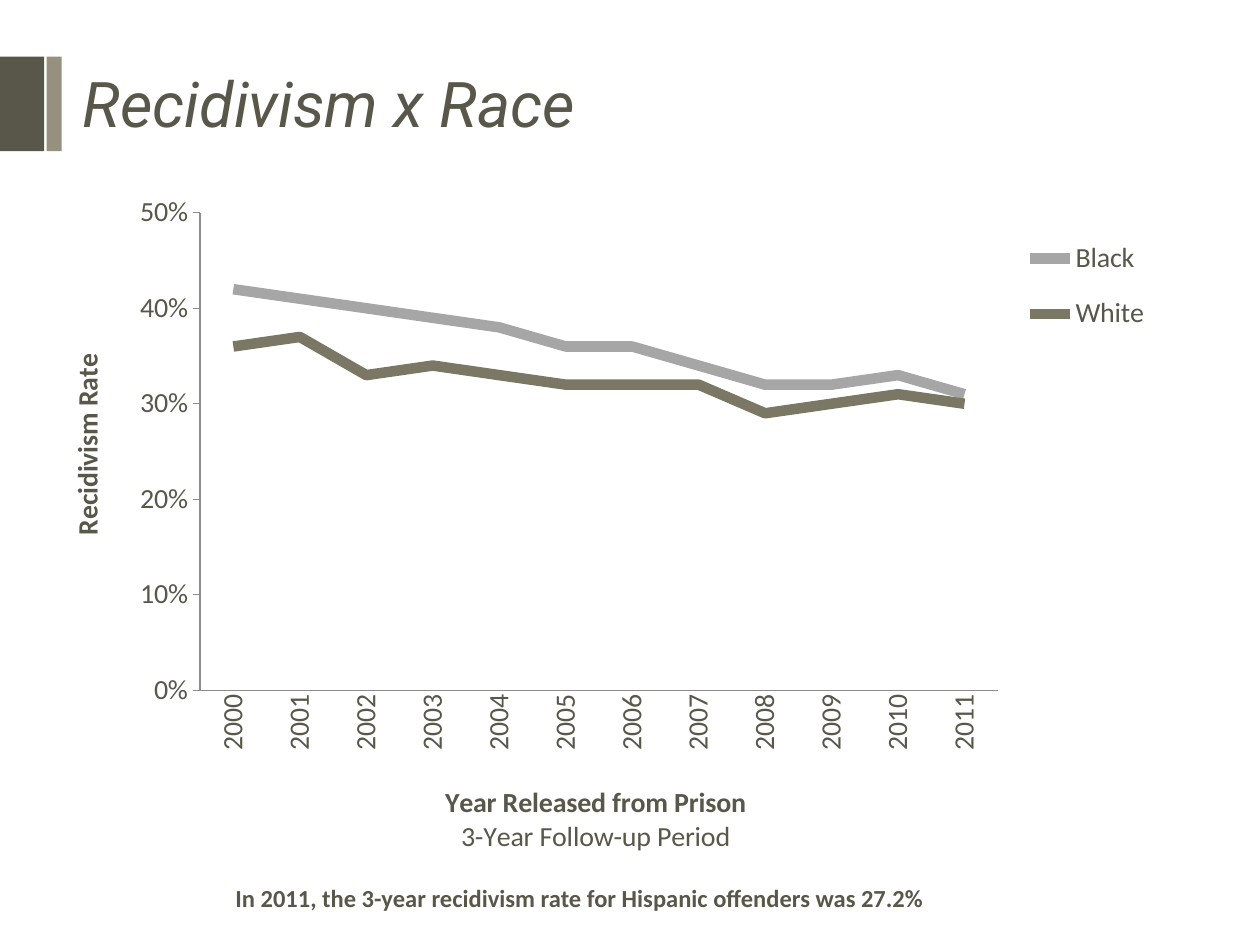
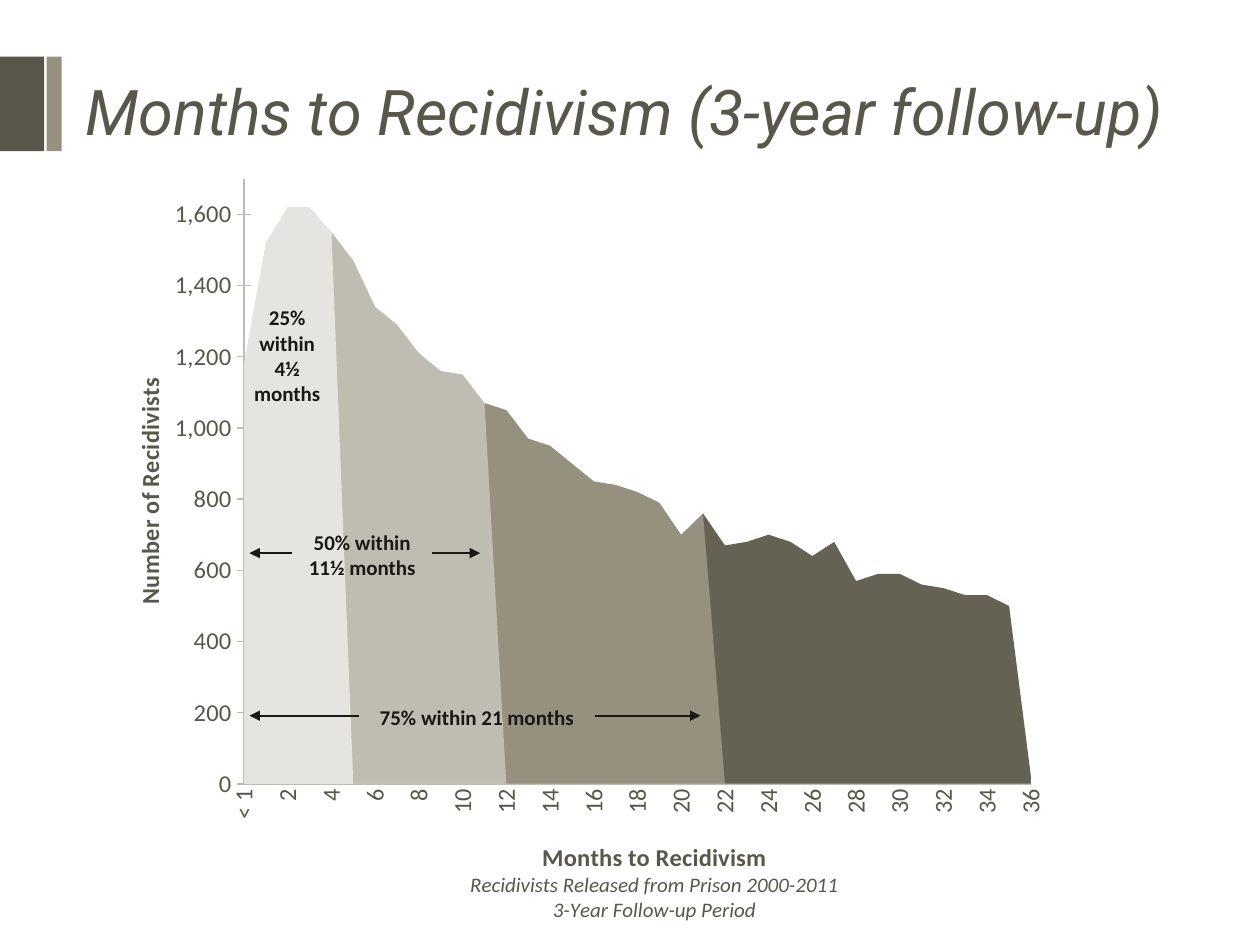
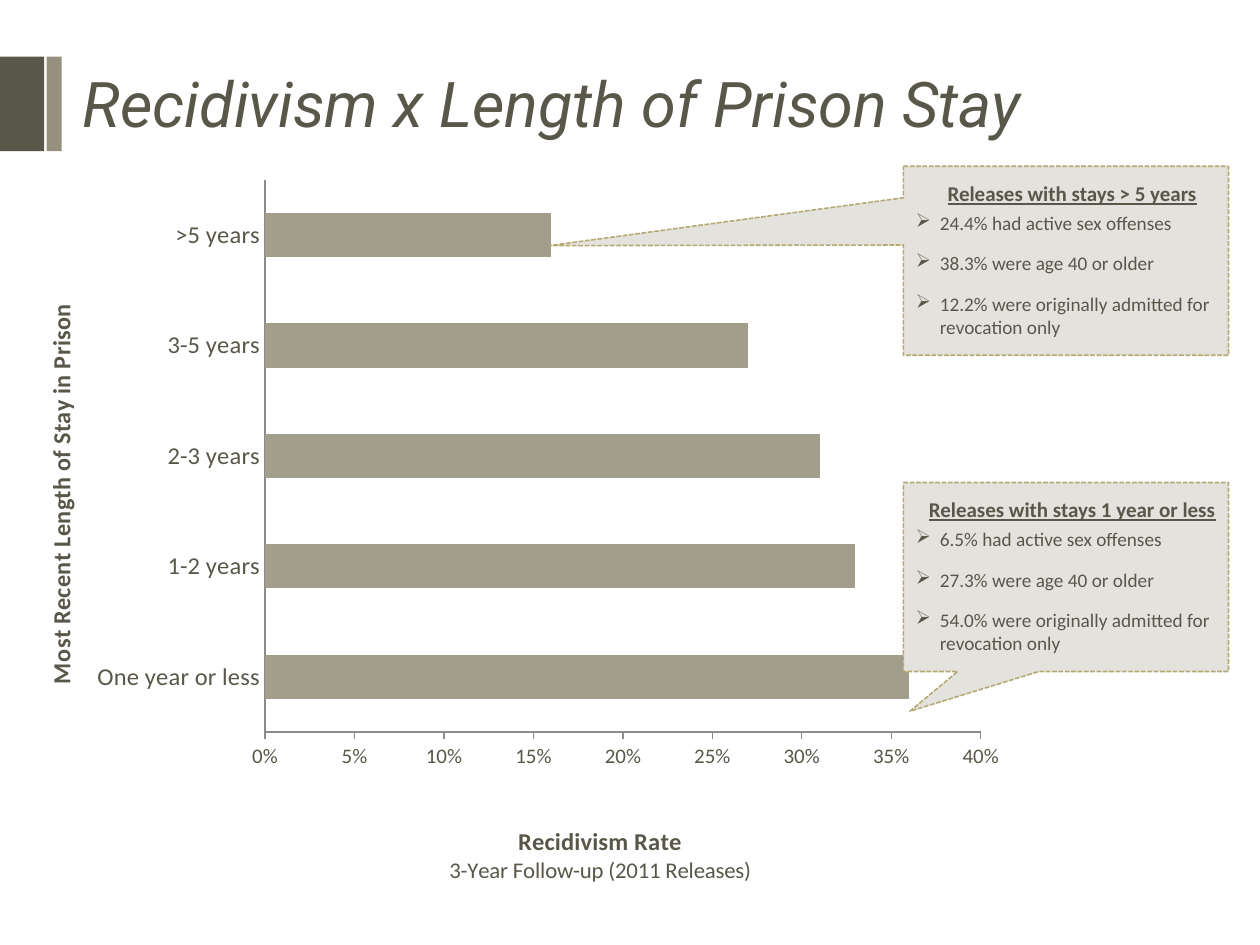
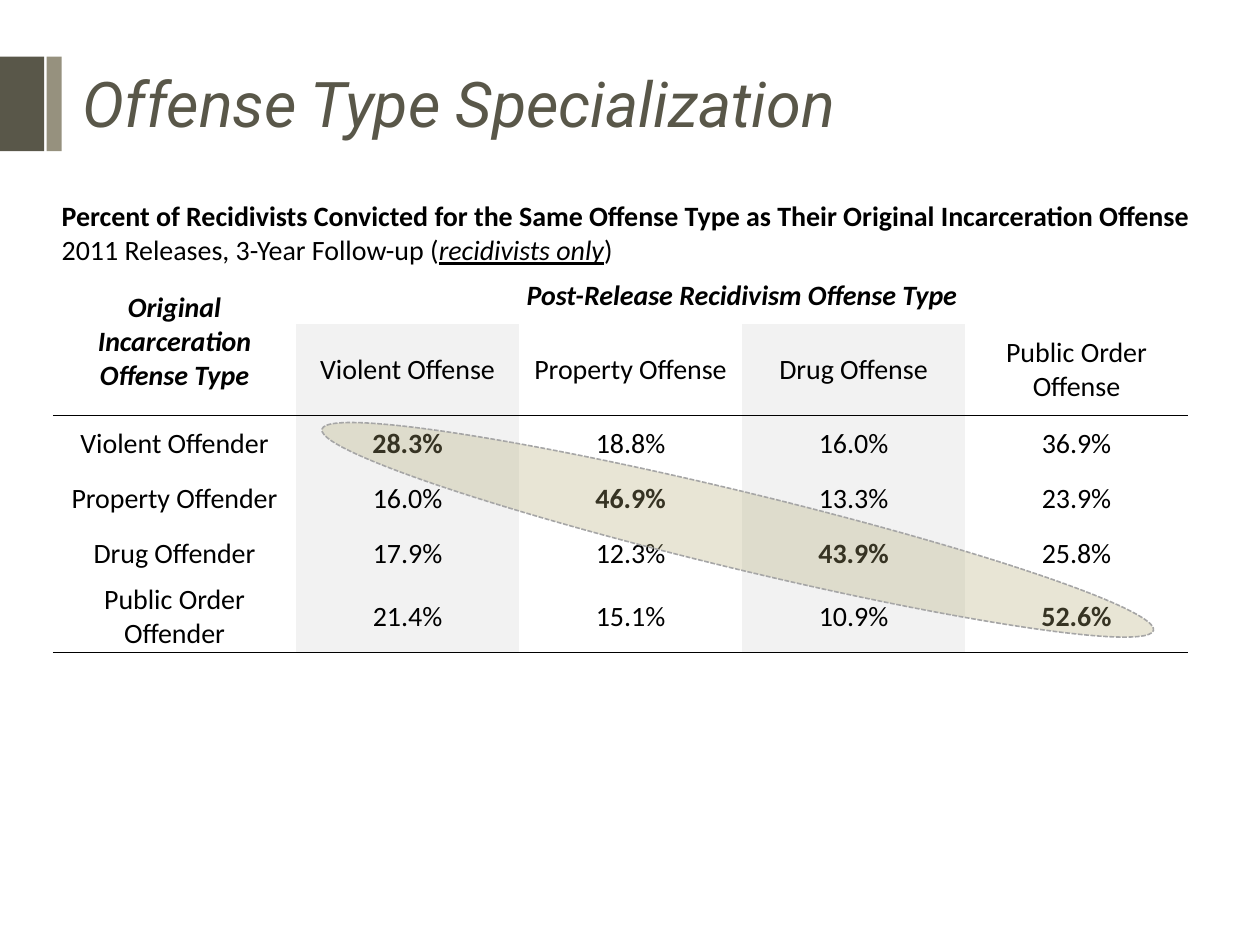
from dataclasses import dataclass

from lxml.etree import SubElement
from pptx import Presentation
from pptx.chart.data import CategoryChartData as ChartData
from pptx.dml.color import RGBColor
from pptx.enum.chart import XL_CHART_TYPE as Chart, XL_LEGEND_POSITION as LegendPos
from pptx.enum.chart import XL_TICK_MARK as Tick
from pptx.enum.dml import MSO_LINE as Dash
from pptx.enum.shapes import MSO_CONNECTOR as Connector, MSO_SHAPE as Shape
from pptx.enum.text import MSO_ANCHOR as Anchor, PP_ALIGN as Align
from pptx.oxml.ns import qn
from pptx.util import Emu, Pt

EMU_PER_PX = 9144  # 100 px to the inch


@dataclass(frozen=True)
class Theme:
    heading_font: str = "Roboto"
    body_font: str = "Calibri"
    ink: str = "595749"
    black: str = "000000"
    label: str = "191814"
    accent: str = "96917E"
    axis: str = "8C8C8C"
    pale_axis: str = "BFBCB1"
    grey: str = "A6A6A6"
    olive: str = "7B7765"
    bar: str = "A19E8C"
    gold: str = "B3AA75"
    callout: str = "E3E2DD"
    column: str = "F2F2F2"
    quartiles: tuple = ("E5E4E0", "BFBCB1", "96917E", "656153")
    title_size: int = 36
    large: int = 16
    medium: int = 14
    note: int = 13
    small: int = 12
    bullet: int = 11


THEME = Theme()


def px(length):
    return Emu(length * EMU_PER_PX)


def box_of(*lengths):
    return [px(length) for length in lengths]


def rgb(code):
    return RGBColor.from_string(code)


# Text
def style(font, size=None, color=THEME.ink, face=THEME.body_font,
          bold=False, italic=False, underline=False):
    font.size = Pt(size or THEME.medium)
    font.color.rgb = rgb(color)
    font.name = face
    font.bold, font.italic, font.underline = bold, italic, underline


def write(frame, *paragraphs, align=None, **look):
    """Each paragraph is a string or a list of (text, changes of look)."""
    for index, content in enumerate(paragraphs):
        line = frame.paragraphs[0] if index == 0 else frame.add_paragraph()
        if align is not None:
            line.alignment = align
        runs = [(content, {})] if isinstance(content, str) else content
        for words, changes in runs:
            for part, piece in enumerate(words.split("\n")):
                if part:
                    line.add_line_break()
                run = line.add_run()
                run.text = piece
                style(run.font, **{**look, **changes})


def add_text(slide, place, *paragraphs, wrap=True, anchor=Anchor.TOP, **look):
    box = slide.shapes.add_textbox(*box_of(*place))
    box.text_frame.word_wrap = wrap
    box.text_frame.vertical_anchor = anchor
    write(box.text_frame, *paragraphs, **look)
    return box


def add_bullet(line, indent=19):
    props = line._p.get_or_add_pPr()
    props.set("marL", str(px(indent)))
    props.set("indent", str(-px(indent)))
    SubElement(props, qn("a:buChar")).set("char", "➢")


# Shapes
def add_figure(slide, kind, place, fill, alpha=None, dashed=None):
    figure = slide.shapes.add_shape(kind, *box_of(*place))
    figure.shadow.inherit = False
    figure.fill.solid()
    figure.fill.fore_color.rgb = rgb(fill)
    if alpha is not None:
        color = figure.fill._xPr.find(qn("a:solidFill"))[0]
        SubElement(color, qn("a:alpha")).set("val", str(alpha * 1000))
    if dashed:
        figure.line.color.rgb = rgb(dashed)
        figure.line.width = Pt(0.9)
        figure.line.dash_style = Dash.SQUARE_DOT
    else:
        figure.line.fill.background()
    return figure


def add_span_arrow(slide, label, side, tip):
    """Arrow from a side of the label out to the tip."""
    arrow = slide.shapes.add_connector(Connector.STRAIGHT, *box_of(*tip, *tip))
    arrow.begin_connect(label, side)
    arrow.line.color.rgb = rgb(THEME.label)
    arrow.line.width = Pt(1)
    SubElement(arrow.line._get_or_add_ln(), qn("a:tailEnd")).set("type", "triangle")
    SubElement(arrow._element.spPr, qn("a:effectLst"))


def add_callout(slide, top, pointer, heading, facts):
    callout = add_figure(slide, Shape.RECTANGULAR_CALLOUT, (717, top, 258, 150),
                         THEME.callout, dashed=THEME.gold)
    callout.adjustments[0], callout.adjustments[1] = pointer
    frame = callout.text_frame
    frame.word_wrap = True
    frame.vertical_anchor = Anchor.MIDDLE
    frame.margin_left, frame.margin_top, frame.margin_right, frame.margin_bottom = \
        box_of(10, 0, 0, 5)
    write(frame, [(heading, dict(size=THEME.small, bold=True, underline=True))],
          *facts, size=THEME.bullet, align=Align.LEFT)
    title, *points = frame.paragraphs
    title.alignment = Align.CENTER
    title.line_spacing = 1.15
    title.space_after = Pt(3)
    for point in points:
        point.space_after = Pt(10)
        add_bullet(point)


def start_slide(deck, title, place=(56, 44, 850, 75)):
    slide = deck.slides.add_slide(deck.slide_layouts[6])
    add_figure(slide, Shape.RECTANGLE, (0, 45, 35, 75), THEME.ink)
    add_figure(slide, Shape.RECTANGLE, (37, 45, 12, 75), THEME.accent)
    add_text(slide, place, title, anchor=Anchor.MIDDLE, size=THEME.title_size,
             face=THEME.heading_font, italic=True)
    return slide


# Charts
def set_layout(part, inner=False, **fractions):
    layout = part.find(qn("c:layout"))
    if layout is None:
        layout = part.makeelement(qn("c:layout"))
        part.insert(0, layout)
    manual = SubElement(layout, qn("c:manualLayout"))
    settings = dict(layoutTarget="inner") if inner else {}
    settings.update(xMode="edge", yMode="edge", **fractions)
    for name, value in settings.items():
        SubElement(manual, qn(f"c:{name}")).set("val", str(value))


def add_chart(slide, kind, place, categories, series, plot):
    """Series are (name, values); plot is the inner area in slide px."""
    data = ChartData()
    data.categories = categories
    for name, values in series:
        data.add_series(name, values)
    chart = slide.shapes.add_chart(kind, *box_of(*place), data).chart
    chart.has_title = chart.has_legend = False
    style(chart.font, size=THEME.large)
    chart.plots[0].vary_by_categories = False
    set_layout(chart._chartSpace.chart.plotArea, inner=True, **within(place, plot))
    return chart


def within(place, area):
    """Position and size of an area as fractions of the chart's frame."""
    left, top, width, height = place
    fractions = dict(x=(area[0] - left) / width, y=(area[1] - top) / height)
    if len(area) == 4:
        fractions.update(w=area[2] / width, h=area[3] / height)
    return {name: round(value, 3) for name, value in fractions.items()}


def format_axis(axis, place, title, title_at, size, tick=Tick.NONE, color=THEME.axis,
                title_size=THEME.medium, upright=False, steep_labels=False):
    axis.has_major_gridlines = False
    axis.major_tick_mark, axis.minor_tick_mark = tick, Tick.NONE
    axis.format.line.color.rgb = rgb(color)
    axis.format.line.width = Pt(0.75)
    style(axis.tick_labels.font, size=size)
    if steep_labels:
        axis._element.find(qn("c:txPr")).find(qn("a:bodyPr")).set("rot", "-5400000")
    heading = axis.axis_title
    write(heading.text_frame, *title, size=title_size, align=Align.CENTER)
    if upright:
        heading.text_frame._txBody.find(qn("a:bodyPr")).set("rot", "-5400000")
    set_layout(heading._element, **within(place, title_at))


def scale_axis(axis, top, step, number_format):
    axis.minimum_scale, axis.maximum_scale, axis.major_unit = 0, top, step
    axis.tick_labels.number_format = number_format
    axis.tick_labels.number_format_is_linked = False


def fill_series(series, color):
    series.format.fill.solid()
    series.format.fill.fore_color.rgb = rgb(color)


def strong(words):
    return [(words, dict(bold=True))]


# Table
def add_bottom_rule(cell):
    props = cell._tc.get_or_add_tcPr()
    line = props.makeelement(qn("a:lnB"), {"w": str(Pt(1))})
    SubElement(SubElement(line, qn("a:solidFill")), qn("a:srgbClr")).set("val", THEME.black)
    props.insert(0, line)


def fill_cell(cell, *paragraphs, align=Align.CENTER, **look):
    cell.vertical_anchor = Anchor.MIDDLE
    cell.margin_left = cell.margin_right = px(7)
    cell.margin_top = cell.margin_bottom = 0
    write(cell.text_frame, *paragraphs, size=THEME.large, color=THEME.black,
          align=align, **look)


def add_plain_table(slide, place, widths, heights):
    table = slide.shapes.add_table(len(heights), len(widths), *box_of(*place)).table
    table.first_row = table.horz_banding = False
    table._tbl.tblPr.find(qn("a:tableStyleId")).text = \
        "{2D5ABB26-0587-4C30-8999-92F81FD0307C}"  # no style, no grid
    for column, width in zip(table.columns, widths):
        column.width = px(width)
    for row, height in zip(table.rows, heights):
        row.height = px(height)
    for cell in table.iter_cells():
        cell.fill.background()
    return table


# Slides
def build_race(deck):
    slide = start_slide(deck, "Recidivism x Race")
    add_text(slide, (177, 696, 675, 34),
             "In 2011, the 3-year recidivism rate for Hispanic offenders was 27.2%", bold=True)
    rates = [
        ("Black", (.42, .41, .40, .39, .38, .36, .36, .34, .32, .32, .33, .31)),
        ("White", (.36, .37, .33, .34, .33, .32, .32, .32, .29, .30, .31, .30)),
    ]
    place = (50, 150, 907, 533)
    chart = add_chart(slide, Chart.LINE, place, [str(year) for year in range(2000, 2012)],
                      rates, plot=(159, 169, 633, 383))
    for series, color in zip(chart.plots[0].series, (THEME.grey, THEME.olive)):
        series.smooth = False
        series.format.line.color.rgb = rgb(color)
        series.format.line.width = Pt(6)
    format_axis(chart.category_axis, place,
                [strong("Year Released from Prison"), "3-Year Follow-up Period"],
                (350, 625), THEME.large, title_size=THEME.large, steep_labels=True)
    format_axis(chart.value_axis, place, [strong("Recidivism Rate")], (50, 280),
                THEME.large, tick=Tick.OUTSIDE, title_size=THEME.large, upright=True)
    scale_axis(chart.value_axis, 0.5, 0.1, "0%")
    chart.has_legend = True
    chart.legend.position = LegendPos.RIGHT
    chart.legend.include_in_layout = False
    style(chart.legend.font, size=THEME.large)
    set_layout(chart.legend._element, **within(place, (800, 175, 125, 106)))


def build_months(deck):
    slide = start_slide(deck, "Months to Recidivism (3-year follow-up)", (58, 44, 900, 87))
    recidivists = (
        1180, 1520, 1620, 1620, 1550, 1470, 1340, 1290, 1210, 1160, 1150, 1070, 1050,
        970, 950, 900, 850, 840, 820, 790, 700, 760, 670, 680, 700, 680, 640, 680, 570,
        590, 590, 560, 550, 530, 530, 500, 20)
    quartile_ends = (0, 4, 11, 21, 36)
    quartiles = [
        (f"Series {number}", [count if first <= month <= last else None
                              for month, count in enumerate(recidivists)])
        for number, (first, last) in enumerate(zip(quartile_ends, quartile_ends[1:]), 1)]
    months = ["< 1"] + [str(month) for month in range(1, 37)]
    place = (101, 125, 806, 612)
    chart = add_chart(slide, Chart.AREA, place, months, quartiles,
                      plot=(194, 142, 625, 488))
    for series, color in zip(chart.plots[0].series, THEME.quartiles):
        fill_series(series, color)
    subtitle = dict(size=THEME.small, italic=True)
    format_axis(chart.category_axis, place,
                [strong("Months to Recidivism"),
                 [("Recidivists Released from Prison 2000-2011", subtitle)],
                 [("3-Year Follow-up Period", subtitle)]],
                (370, 673), THEME.medium, color=THEME.pale_axis, steep_labels=True)
    format_axis(chart.value_axis, place, [strong("Number of Recidivists")], (102, 302),
                THEME.medium, tick=Tick.CROSS, color=THEME.pale_axis, upright=True)
    scale_axis(chart.value_axis, 1700, 200, "#,##0")

    # Label every second month, start at the axis, drop blanks to zero
    for last in chart.category_axis._element.iter(qn("c:noMultiLvlLbl")):
        skip = last.makeelement(qn("c:tickLblSkip"), {"val": "2"})
        last.addprevious(skip)
    for tag, value in (("c:crossBetween", "midCat"), ("c:dispBlanksAs", "zero")):
        for setting in chart._chartSpace.iter(qn(tag)):
            setting.set("val", value)

    # Quartile labels and their spans
    look = dict(wrap=False, align=Align.CENTER, size=THEME.small, color=THEME.label,
                bold=True)
    add_text(slide, (183, 237, 90, 85), "25%", "within", "4½", "months", **look)
    half = add_text(slide, (232, 415, 111, 48), "50% within\n11½ months", **look)
    most = add_text(slide, (285, 554, 187, 28), "75% within 21 months", **look)
    for label, middle, end in ((half, 439, 381), (most, 568, 556)):
        add_span_arrow(slide, label, 1, (198, middle))
        add_span_arrow(slide, label, 3, (end, middle))


def build_stay(deck):
    slide = start_slide(deck, "Recidivism x Length of Prison Stay")
    place = (8, 132, 800, 575)
    stays = ("One year or less", "1-2 years", "2-3 years", "3-5 years", ">5 years")
    chart = add_chart(slide, Chart.BAR_CLUSTERED, place, stays,
                      [("Series 1", (.36, .33, .31, .27, .16))],
                      plot=(210, 143, 568, 445))
    chart.plots[0].gap_width = 150
    fill_series(chart.plots[0].series[0], THEME.bar)
    format_axis(chart.category_axis, place, [strong("Most Recent Length of Stay in Prison")],
                (31, 244), THEME.medium, upright=True)
    format_axis(chart.value_axis, place,
                [strong("Recidivism Rate"),
                 [("3-Year Follow-up (2011 Releases)", dict(size=THEME.note))]],
                (354, 660), THEME.small, tick=Tick.OUTSIDE)
    scale_axis(chart.value_axis, 0.4, 0.05, "0%")

    callouts = (
        (132, (-1.59, -0.08), "Releases with stays > 5 years", ("24.4%", "38.3%", "12.2%")),
        (383, (-0.48, 0.71), "Releases with stays 1 year or less", ("6.5%", "27.3%", "54.0%")),
    )
    for top, pointer, heading, (offenses, older, revoked) in callouts:
        add_callout(slide, top, pointer, heading,
                    [f"{offenses} had active sex offenses",
                     f"{older} were age 40 or older",
                     f"{revoked} were originally admitted for revocation only"])


def build_specialization(deck):
    slide = start_slide(deck, "Offense Type Specialization")
    offenses = ("Violent Offense", "Property Offense", "Drug Offense", "Public Order Offense")
    offenders = (
        ("Violent Offender", "28.3%", "18.8%", "16.0%", "36.9%"),
        ("Property Offender", "16.0%", "46.9%", "13.3%", "23.9%"),
        ("Drug Offender", "17.9%", "12.3%", "43.9%", "25.8%"),
        ("Public Order Offender", "21.4%", "15.1%", "10.9%", "52.6%"),
    )
    table = add_plain_table(slide, (42, 158, 949, 360), [193] + [177] * 4 + [24] * 2,
                            (55, 44, 73, 44, 44, 44, 56))
    cell = table.cell

    # Headings
    cell(0, 0).merge(cell(0, 6))
    cell(1, 0).merge(cell(2, 0))
    cell(1, 1).merge(cell(1, 4))
    fill_cell(cell(0, 0),
              strong("Percent of Recidivists Convicted for the Same Offense Type "
                     "as Their Original Incarceration Offense"),
              [("2011 Releases, 3-Year Follow-up (", {}),
               ("recidivists only", dict(italic=True, underline=True)), (")", {})],
              align=Align.LEFT)
    fill_cell(cell(1, 0), "Original Incarceration Offense Type", bold=True, italic=True)
    fill_cell(cell(1, 1), "Post-Release Recidivism Offense Type", bold=True, italic=True)
    for column, offense in enumerate(offenses, 1):
        fill_cell(cell(2, column), offense)

    # Rates, with the same offense type in bold
    for row, rates in enumerate(offenders):
        for column, rate in enumerate(rates):
            fill_cell(cell(row + 3, column), rate, bold=column == row + 1)

    # Shaded columns and rules
    for column in (1, 3):
        for row in range(2, 7):
            cell(row, column).fill.solid()
            cell(row, column).fill.fore_color.rgb = rgb(THEME.column)
    add_bottom_rule(cell(1, 0))
    for column in range(5):
        add_bottom_rule(cell(2, column))
        add_bottom_rule(cell(6, column))

    diagonal = add_figure(slide, Shape.OVAL, (246, 390, 679, 61), THEME.gold, alpha=30,
                          dashed=THEME.grey)
    diagonal.rotation = 13.6


def main():
    deck = Presentation()
    deck.slide_width, deck.slide_height = box_of(1000, 750)
    for build in (build_race, build_months, build_stay, build_specialization):
        build(deck)
    deck.save("out.pptx")


if __name__ == "__main__":
    main()
